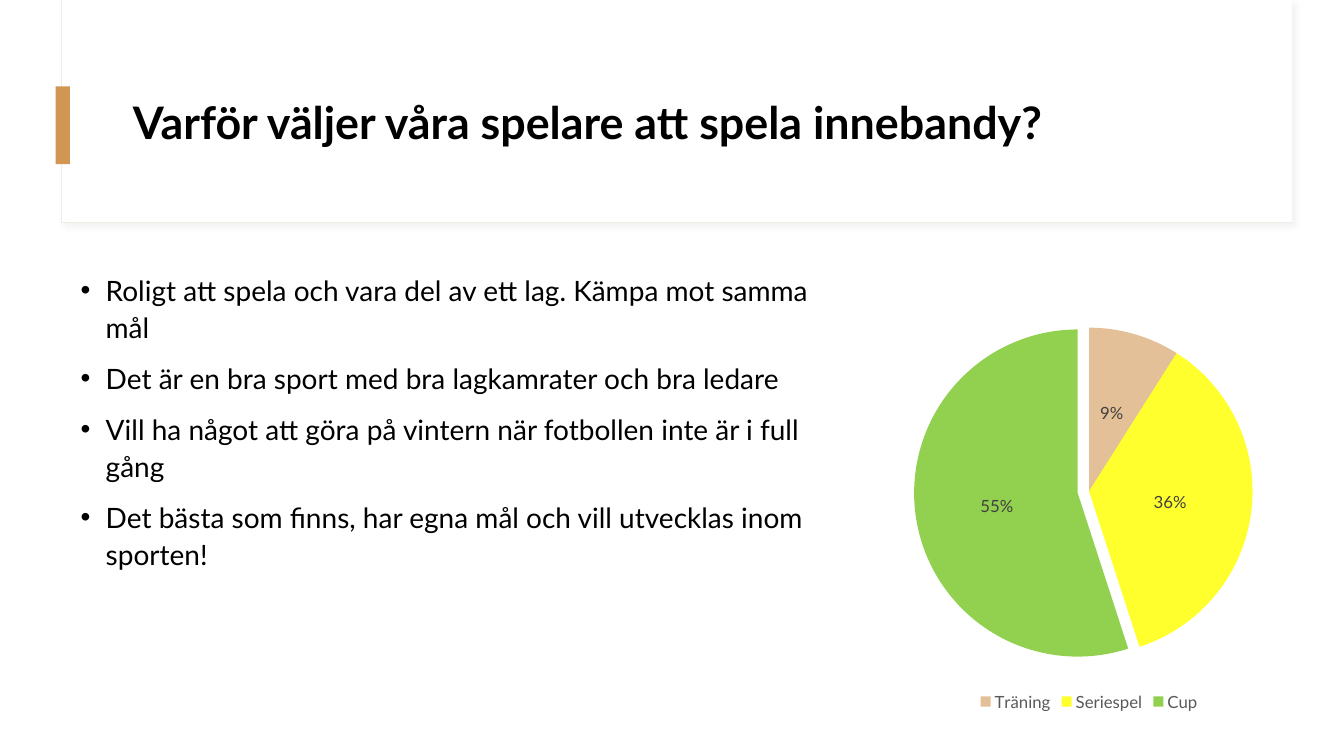
from dataclasses import dataclass

from lxml import etree
from pptx import Presentation
from pptx.chart.data import CategoryChartData
from pptx.dml.color import RGBColor
from pptx.enum.chart import XL_CHART_TYPE, XL_LABEL_POSITION, XL_LEGEND_POSITION
from pptx.enum.shapes import MSO_SHAPE
from pptx.enum.text import MSO_ANCHOR
from pptx.oxml.ns import qn
from pptx.util import Cm, Pt

RECT = MSO_SHAPE.RECTANGLE
PIE = XL_CHART_TYPE.PIE
BOTTOM = XL_LEGEND_POSITION.BOTTOM
CENTER = XL_LABEL_POSITION.CENTER
TOP, MIDDLE = MSO_ANCHOR.TOP, MSO_ANCHOR.MIDDLE
FONT = "Lato"


@dataclass
class Box:
    left: float
    top: float
    width: float
    height: float

    def place(self) -> tuple:
        return Cm(self.left), Cm(self.top), Cm(self.width), Cm(self.height)


@dataclass
class Panel:
    box: Box
    fill: str
    line: str = ""
    shadow: str = ""


@dataclass
class Slice:
    name: str
    value: int
    color: str
    alpha: int = 100
    burst: int = 0


PANELS = [
    Panel(Box(1.55, 0, 31.01, 5.61), "FFFFFF", line="F0EBE5", shadow="D9D9D9"),
    Panel(Box(1.57, 0, 30.99, 5.59), "FFFFFF"),
    Panel(Box(1.4, 2.18, 0.36, 1.96), "D19651"),
]
TITLE = "Varför väljer våra spelare att spela innebandy?"
REASONS = [
    "Roligt att spela och vara del av ett lag. Kämpa mot samma mål",
    "Det är en bra sport med bra lagkamrater och bra ledare",
    "Vill ha något att göra på vintern när fotbollen inte är i full gång",
    "Det bästa som finns, har egna mål och vill utvecklas inom sporten!",
]
SLICES = [
    Slice("Träning", 9, "E3C097"),
    Slice("Seriespel", 36, "FFFF00", alpha=82),
    Slice("Cup", 55, "92D050", burst=7),
]


def rgb(code: str) -> RGBColor:
    return RGBColor.from_string(code)


def set_font(font, size: float, color: str, bold: bool = False) -> None:
    font.name, font.size, font.bold = FONT, Pt(size), bold
    font.color.rgb = rgb(color)


def add_alpha(color, share: int) -> None:
    etree.SubElement(color, qn("a:alpha"), val=str(share * 1000))


def add_shadow(shape, code: str) -> None:
    """Cast a soft shadow down and to the right."""
    effects = shape._element.spPr.find(qn("a:effectLst"))
    outer = etree.SubElement(effects, qn("a:outerShdw"), blurRad=str(Pt(4)),
                             dist=str(Pt(3)), dir=str(45 * 60000), rotWithShape="0")
    add_alpha(etree.SubElement(outer, qn("a:srgbClr"), val=code), 30)


def add_panel(slide, panel: Panel) -> None:
    shape = slide.shapes.add_shape(RECT, *panel.box.place())
    shape.shadow.inherit = False
    shape.fill.solid()
    shape.fill.fore_color.rgb = rgb(panel.fill)
    if panel.line:
        shape.line.color.rgb = rgb(panel.line)
        shape.line.width = Pt(0.75)
    else:
        shape.line.fill.background()
    if panel.shadow:
        add_shadow(shape, panel.shadow)


def add_text(slide, box: Box, lines: list[str], *, size: float, bold: bool = False,
             anchor=TOP, space: float = 1, before: float = 0, bullet: str = "") -> None:
    frame = slide.shapes.add_textbox(*box.place()).text_frame
    frame.word_wrap, frame.vertical_anchor = True, anchor
    for i, line in enumerate(lines):
        para = frame.add_paragraph() if i else frame.paragraphs[0]
        para.line_spacing, para.space_before = space, Pt(before)
        run = para.add_run()
        run.text = line
        set_font(run.font, size, "000000", bold)
        if bullet:
            props = para._p.get_or_add_pPr()
            props.set("marL", str(Pt(18)))
            props.set("indent", str(-Pt(18)))
            etree.SubElement(props, qn("a:buFont"), typeface="Arial")
            etree.SubElement(props, qn("a:buChar"), char=bullet)


def add_pie(slide, box: Box, slices: list[Slice]) -> None:
    data = CategoryChartData()
    data.categories = [part.name for part in slices]
    data.add_series("Series 1", [part.value for part in slices])
    chart = slide.shapes.add_chart(PIE, *box.place(), data).chart
    set_font(chart.font, 10, "000000")
    chart.has_title = False
    chart.has_legend = True
    chart.legend.position = BOTTOM
    chart.legend.include_in_layout = False
    set_font(chart.legend.font, 12, "595959")

    plot = chart.plots[0]
    plot.vary_by_categories = True
    plot.has_data_labels = True
    labels = plot.data_labels
    labels.show_percentage, labels.show_value = True, False
    labels.number_format, labels.number_format_is_linked = "0%", False
    labels.position = CENTER
    set_font(labels.font, 12, "404040")

    for i, part in enumerate(slices):
        point = plot.series[0].points[i]
        fill = point.format.fill
        fill.solid()
        fill.fore_color.rgb = rgb(part.color)
        point.format.line.fill.background()
        node = plot.series[0]._element.findall(qn("c:dPt"))[i]
        if part.alpha < 100:
            add_alpha(node.find(".//" + qn("a:srgbClr")), part.alpha)
        if part.burst:
            burst = etree.Element(qn("c:explosion"), val=str(part.burst))
            node.find(qn("c:spPr")).addprevious(burst)


def main() -> None:
    deck = Presentation()
    deck.slide_width, deck.slide_height = Cm(33.87), Cm(19.05)
    slide = deck.slides.add_slide(deck.slide_layouts[6])
    for panel in PANELS:
        add_panel(slide, panel)
    add_text(slide, Box(3.1, 1.52, 28.24, 3.28), [TITLE], size=32, bold=True,
             anchor=MIDDLE, space=0.9)
    add_text(slide, Box(1.78, 6.68, 18.9, 10.26), REASONS, size=20,
             space=1.1, before=10, bullet="•")
    add_pie(slide, Box(17.22, 7.62, 20.45, 10.41), SLICES)
    deck.save("out.pptx")


if __name__ == "__main__":
    main()
